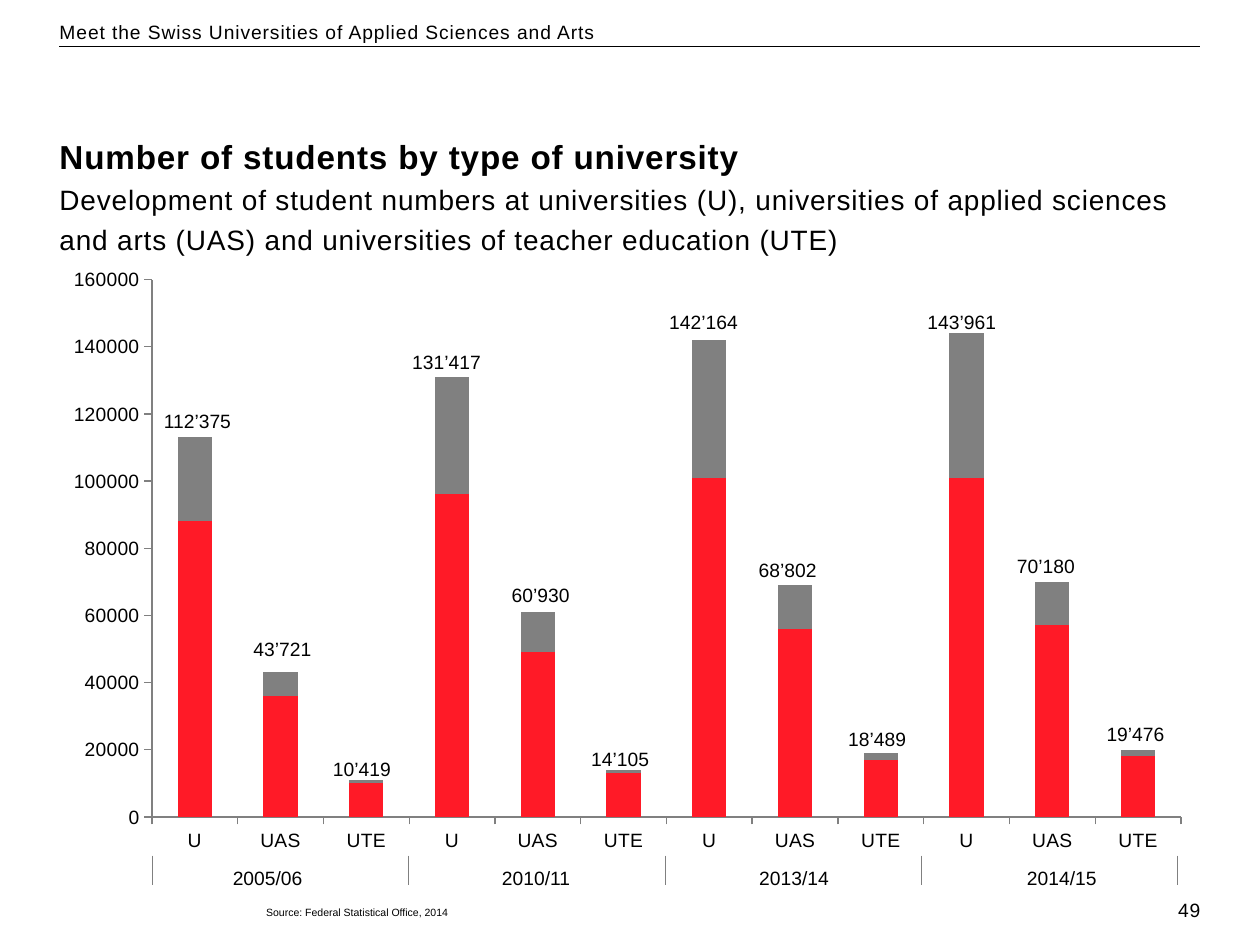
from lxml import etree
from pptx import Presentation
from pptx.chart.data import CategoryChartData
from pptx.dml.color import RGBColor
from pptx.enum.chart import XL_CHART_TYPE, XL_TICK_MARK
from pptx.enum.shapes import MSO_CONNECTOR
from pptx.enum.text import MSO_ANCHOR, PP_ALIGN
from pptx.oxml import parse_xml
from pptx.oxml.ns import nsdecls, qn
from pptx.util import Pt

STACKED = XL_CHART_TYPE.COLUMN_STACKED
OUTSIDE = XL_TICK_MARK.OUTSIDE
STRAIGHT = MSO_CONNECTOR.STRAIGHT
TOP = MSO_ANCHOR.TOP
LEFT, RIGHT = PP_ALIGN.LEFT, PP_ALIGN.RIGHT

BLACK, RED, GREY = "000000", "FF1A27", "808080"
MARGIN, CONTENT_WIDTH = 34, 652
LABEL_WIDTH, LABEL_HEIGHT = 67.5, 13.5

TYPES = ["U", "UAS", "UTE"]
YEARS = [("2005/06", 43), ("2010/11", 50), ("2013/14", 50.5), ("2014/15", 57)]
SERIES = [
    ("Series 1", RED, [88000, 36000, 10000, 96000, 49000, 13000,
                       101000, 56000, 17000, 101000, 57000, 18000]),
    ("Series 2", GREY, [25000, 7000, 1000, 35000, 12000, 1000,
                        41000, 13000, 2000, 43000, 13000, 2000]),
]
TOTALS = [
    ("112’375", 59.6, 83.5), ("43’721", 110.8, 213.8), ("10’419", 156.2, 282.2),
    ("131’417", 201.5, 49.7), ("60’930", 258.4, 182.8), ("14’105", 303.8, 276.4),
    ("142’164", 348.4, 26.6), ("68’802", 399.5, 168.5), ("18’489", 450.7, 265),
    ("143’961", 496, 26.6), ("70’180", 547.1, 166.3), ("19’476", 598.3, 262),
]


def color(value):
    return RGBColor.from_string(value)


def add_span(para, text, size, bold=False, spacing=0):
    span = para.add_run()
    span.text = text
    span.font.name = "Arial"
    span.font.size = Pt(size)
    span.font.bold = bold
    span.font.color.rgb = color(BLACK)
    if spacing:
        span.font._element.set("spc", str(int(spacing * 100)))


def clear_insets(frame):
    frame.margin_left = frame.margin_right = Pt(0)
    frame.margin_top = frame.margin_bottom = Pt(0)
    frame.vertical_anchor = TOP
    frame.word_wrap = True


def add_text(page, left, top, width, height, text, size=11, spacing=0, align=LEFT):
    box = page.shapes.add_textbox(Pt(left), Pt(top), Pt(width), Pt(height))
    clear_insets(box.text_frame)
    para = box.text_frame.paragraphs[0]
    para.alignment = align
    if spacing:
        para.line_spacing = Pt(13.2)
    add_span(para, text, size, spacing=spacing)
    return box


def add_rule(page, x1, y1, x2, y2, line_color, width):
    rule = page.shapes.add_connector(STRAIGHT, Pt(x1), Pt(y1), Pt(x2), Pt(y2))
    rule.line.color.rgb = color(line_color)
    rule.line.width = Pt(width)
    etree.SubElement(rule._element.spPr, qn("a:effectLst"))


def add_header(page, left, top, width):
    add_rule(page, left, top + 15, left + width, top + 15, BLACK, 0.6)
    add_text(page, left, top, width, 26.5,
             "Meet the Swiss Universities of Applied Sciences and Arts", spacing=0.5)


def add_title(page, left, top, width, height):
    title = page.shapes.title
    title.left, title.top, title.width, title.height = map(Pt, (left, top, width, height))
    clear_insets(title.text_frame)
    para = title.text_frame.paragraphs[0]
    para.alignment = LEFT
    para.line_spacing = Pt(22.8)
    add_span(para, "Number of students by type of university", 19, True, 0.5)
    para.add_line_break()
    add_span(para, "Development of student numbers at universities (U), universities of "
             "applied sciences and arts (UAS) and universities of teacher education (UTE)",
             16, spacing=0.5)


def format_axis(axis):
    axis.has_major_gridlines = False
    axis.major_tick_mark = OUTSIDE
    axis.format.line.color.rgb = color(GREY)
    axis.format.line.width = Pt(0.75)
    axis.tick_labels.font.name = "Arial"
    axis.tick_labels.font.size = Pt(11)
    axis.tick_labels.font.color.rgb = color(BLACK)


def place_plot(chart, x, y, width, height):
    area = chart._chartSpace.chart.plotArea
    for old in area.findall(qn("c:layout")):
        area.remove(old)
    area.insert(0, parse_xml(
        f'<c:layout {nsdecls("c")}><c:manualLayout><c:layoutTarget val="inner"/>'
        '<c:xMode val="edge"/><c:yMode val="edge"/>'
        f'<c:x val="{x}"/><c:y val="{y}"/><c:w val="{width}"/><c:h val="{height}"/>'
        '</c:manualLayout></c:layout>'))


def add_student_chart(page, left, top, width, height):
    data = CategoryChartData(number_format="General")
    data.categories = TYPES * len(YEARS)
    for name, _, values in SERIES:
        data.add_series(name, values)
    chart = page.shapes.add_chart(
        STACKED, Pt(left), Pt(top), Pt(width), Pt(height), data).chart
    chart.has_legend = False
    chart.has_title = False
    chart.font.name = "Calibri"
    chart.font.size = Pt(18)
    chart.font.color.rgb = color(BLACK)
    format_axis(chart.category_axis)
    format_axis(chart.value_axis)
    chart.value_axis.minimum_scale = 0
    chart.value_axis.maximum_scale = 160000
    chart.value_axis.major_unit = 20000
    plot = chart.plots[0]
    plot.gap_width = 150
    plot.overlap = 100
    plot.vary_by_categories = False
    for series, (_, fill, _) in zip(plot.series, SERIES):
        series.format.fill.solid()
        series.format.fill.fore_color.rgb = color(fill)
    place_plot(chart, 0.081, 0.027, 0.902, 0.894)
    for text, x, y in TOTALS:
        add_text(page, left + x, top + y, LABEL_WIDTH, LABEL_HEIGHT, text)


def add_year_band(page, left, top, width, height):
    step = width / len(YEARS)
    for index in range(len(YEARS) + 1):
        x = left + index * step
        add_rule(page, x, top, x, top + height, GREY, 0.5)
    for index, (year, indent) in enumerate(YEARS):
        offset = indent + 3 if index == 0 else indent + 3.3
        add_text(page, left + index * step + offset, top + 6,
                 LABEL_WIDTH, LABEL_HEIGHT, year)


def add_footer(page, left, top, width):
    source = add_text(page, left + 111, top + 0.7, 142, 14.5,
                      "Source: Federal Statistical Office, 2014", 6)
    frame = source.text_frame
    frame.margin_left = frame.margin_right = Pt(7.2)
    frame.margin_top = frame.margin_bottom = Pt(3.6)
    add_text(page, left + width - 42.5, top, 42.5, 14.5, "49", spacing=0.5, align=RIGHT)


def main():
    deck = Presentation()
    deck.slide_width, deck.slide_height = Pt(720), Pt(540)
    page = deck.slides.add_slide(deck.slide_layouts[5])
    add_header(page, MARGIN, 11.5, CONTENT_WIDTH)
    add_title(page, MARGIN, 78, CONTENT_WIDTH, 30)
    add_student_chart(page, MARGIN, 150.5, CONTENT_WIDTH, 343.5)
    add_year_band(page, 87, 489, 586, 17)
    add_footer(page, MARGIN, 513.4, CONTENT_WIDTH)
    deck.save("out.pptx")


if __name__ == "__main__":
    main()
